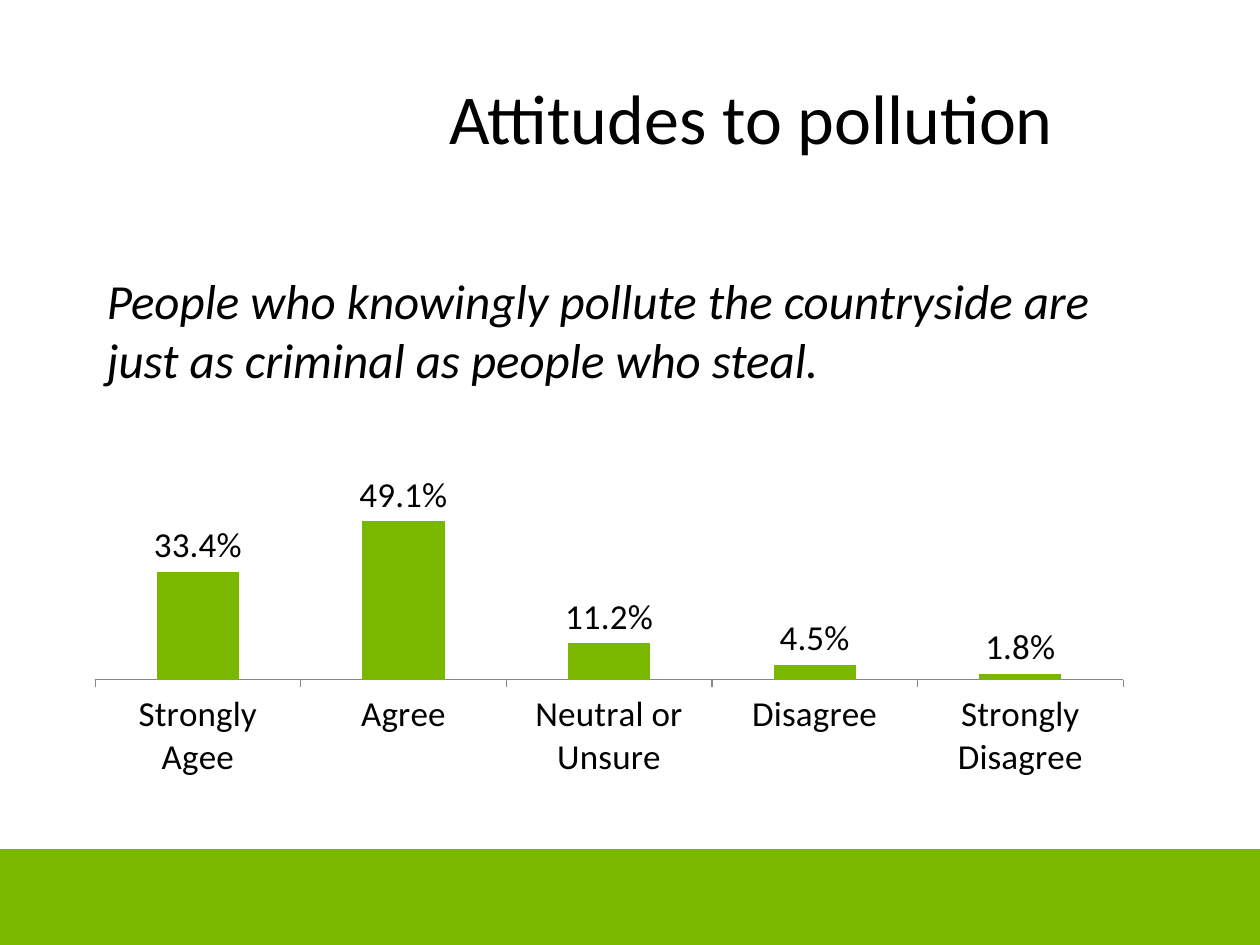
from lxml import etree
from pptx import Presentation
from pptx import util as u
from pptx.chart.data import CategoryChartData
from pptx.dml.color import RGBColor
from pptx.enum import chart as charts, shapes, text
from pptx.oxml.ns import qn

GREEN = "7AB800"
BLACK = "000000"


def color(value):
    return RGBColor.from_string(value)


def style_font(font, size):
    font.name = "Calibri"
    font.size = u.Pt(size)
    font.color.rgb = color(BLACK)


deck = Presentation()
deck.slide_width, deck.slide_height = u.Inches(10), u.Inches(7.5)
page = deck.slides.add_slide(deck.slide_layouts[5])

# Footer band
band = page.shapes.add_shape(
    shapes.MSO_SHAPE.RECTANGLE, 0, u.Inches(6.74), u.Inches(10), u.Inches(0.76))
band.shadow.inherit = False
band.fill.solid()
band.fill.fore_color.rgb = color(GREEN)
band.line.fill.background()

# Title
title = page.shapes.title
title.left, title.top = u.Inches(2.42), u.Inches(0.3)
title.width, title.height = u.Inches(7.08), u.Inches(1.25)
title.text_frame.text = "Attitudes to pollution"
title.text_frame.vertical_anchor = text.MSO_ANCHOR.MIDDLE
heading = title.text_frame.paragraphs[0]
heading.alignment = text.PP_ALIGN.CENTER
style_font(heading.runs[0].font, 40)

# Survey statement
statement = page.shapes.add_textbox(
    u.Inches(0.75), u.Inches(2.1), u.Inches(8.5), u.Inches(1.04))
frame = statement.text_frame
frame.word_wrap = True
frame.auto_size = text.MSO_AUTO_SIZE.SHAPE_TO_FIT_TEXT
frame.text = ("People who knowingly pollute the countryside are "
              "just as criminal as people who steal.")
span = frame.paragraphs[0].runs[0]
style_font(span.font, 28)
span.font.italic = True

# Answers chart
answers = CategoryChartData(number_format="0.0%")
answers.categories = [
    "Strongly Agee", "Agree", "Neutral or Unsure", "Disagree", "Strongly Disagree"]
answers.add_series("Series 1", [0.334, 0.491, 0.112, 0.045, 0.018])
chart = page.shapes.add_chart(
    charts.XL_CHART_TYPE.COLUMN_CLUSTERED, u.Inches(0.67), u.Inches(3.51),
    u.Inches(8.5), u.Inches(2.9), answers).chart
chart.has_legend = False
chart.has_title = False
style_font(chart.font, 20)

value_axis = chart.value_axis
value_axis.visible = False
value_axis.has_major_gridlines = False
value_axis.minimum_scale, value_axis.maximum_scale = 0, 0.6
value_axis.tick_labels.number_format = "0.0%"
value_axis.tick_labels.number_format_is_linked = False

category_axis = chart.category_axis
category_axis.major_tick_mark = charts.XL_TICK_MARK.OUTSIDE
category_axis.format.line.color.rgb = color("868686")
category_axis.format.line.width = u.Pt(0.75)

plot = chart.plots[0]
plot.gap_width = 150
plot.vary_by_categories = False
bars = plot.series[0].format
bars.fill.solid()
bars.fill.fore_color.rgb = color(GREEN)

labels = plot.series[0].data_labels
labels.show_value = True
labels.number_format = "0.0%"
labels.number_format_is_linked = False
labels.position = charts.XL_LABEL_POSITION.OUTSIDE_END
style_font(labels.font, 20)

# Fixed inner plot area, as fractions of the chart frame
plot_area = chart.element.find(".//" + qn("c:plotArea"))
for layout in plot_area.findall(qn("c:layout")):
    plot_area.remove(layout)
layout = etree.Element(qn("c:layout"))
plot_area.insert(0, layout)
manual = etree.SubElement(layout, qn("c:manualLayout"))
for name, value in [("layoutTarget", "inner"), ("xMode", "edge"), ("yMode", "edge"),
                    ("x", "0.01"), ("y", "0.12"), ("w", "0.96"), ("h", "0.53")]:
    etree.SubElement(manual, qn("c:" + name)).set("val", value)

deck.save("out.pptx")
